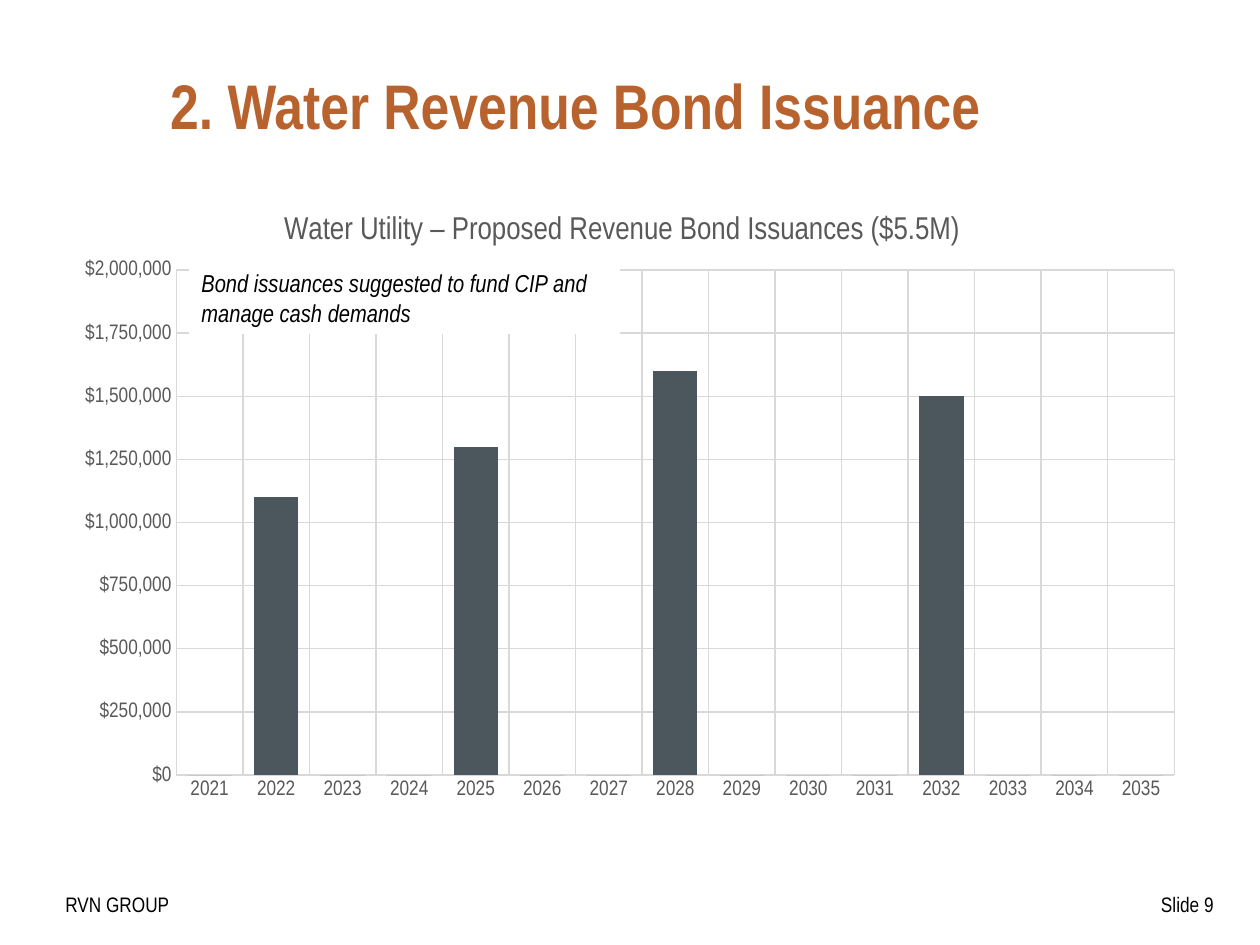
from lxml import etree
from pptx import Presentation
from pptx.chart import data as cd
from pptx.dml import color as dc
from pptx.enum import chart as ce, shapes, text
from pptx.oxml import ns
from pptx.util import Inches, Pt

FONT = "Arial Narrow"
HUES = {"title": "B8632E", "text": "000000", "label": "595959",
        "grid": "D9D9D9", "bar": "4B575D", "paper": "FFFFFF"}
TITLE = "2. Water Revenue Bond Issuance"
HEAD = "Water Utility – Proposed Revenue Bond Issuances ($5.5M)"
NOTE = "Bond issuances suggested to fund CIP and manage cash demands"
FOOT = [("RVN GROUP", (0.42, 7.03, 1.42, 0.3), "LEFT"),
        ("Slide 9", (8.92, 7.03, 0.81, 0.3), "RIGHT")]
YEARS = range(2021, 2036)
BONDS = {2022: 1100000, 2025: 1300000, 2028: 1600000, 2032: 1500000}


def hue(name):
    return dc.RGBColor.from_string(HUES[name])


def style(font, size, name, bold=False, italic=False):
    font.name, font.size = FONT, Pt(size)
    font.bold, font.italic = bold, italic
    font.color.rgb = hue(name)


def write(shape, words, size=12, name="text", align="LEFT", anchor="TOP", **looks):
    frame = shape.text_frame
    frame.word_wrap = True
    frame.vertical_anchor = getattr(text.MSO_ANCHOR, anchor)
    par = frame.paragraphs[0]
    par.alignment = getattr(text.PP_ALIGN, align)
    run = par.add_run()
    run.text = words
    style(run.font, size, name, **looks)


def rule(line):
    line.color.rgb = hue("grid")
    line.width = Pt(0.75)


def layout(node, inner=False, **spots):
    old = node.find(ns.qn("c:layout"))
    if old is None:
        old = etree.Element(ns.qn("c:layout"))
        node.insert(1 if node.tag == ns.qn("c:title") else 0, old)
    box = etree.SubElement(old, ns.qn("c:manualLayout"))
    pairs = [("layoutTarget", "inner")] if inner else []
    pairs += [("xMode", "edge"), ("yMode", "edge"), *spots.items()]
    for key, val in pairs:
        etree.SubElement(box, ns.qn("c:" + key)).set("val", str(val))


def place(box):
    return [Inches(n) for n in box]


def draw(slide):
    data = cd.CategoryChartData(number_format='"$"#,##0')
    data.categories = [str(y) for y in YEARS]
    data.add_series("Series 1", [BONDS.get(y, 0) for y in YEARS])
    chart = slide.shapes.add_chart(ce.XL_CHART_TYPE.COLUMN_STACKED,
                                   *place((0.5, 1.5, 9, 4.95)), data).chart
    style(chart.font, 10, "text")
    chart.has_legend = False
    chart.has_title = True
    head = chart.chart_title
    run = head.text_frame.paragraphs[0].add_run()
    run.text = HEAD
    style(run.font, 18, "label")
    layout(head._element, x=0.19, y=0.03)
    layout(chart._chartSpace.chart.plotArea, True, x=0.1, y=0.13, w=0.88, h=0.81)

    plot = chart.plots[0]
    plot.gap_width, plot.overlap = 50, 100
    plot.vary_by_categories = False
    fill = plot.series[0].format.fill
    fill.solid()
    fill.fore_color.rgb = hue("bar")

    cat, val = chart.category_axis, chart.value_axis
    for axis in (cat, val):
        axis.major_tick_mark = axis.minor_tick_mark = ce.XL_TICK_MARK.NONE
        axis.has_major_gridlines = True
        rule(axis.major_gridlines.format.line)
        style(axis.tick_labels.font, 12, "label")
    rule(cat.format.line)
    val.format.line.fill.background()
    val.minimum_scale, val.maximum_scale, val.major_unit = 0, 2000000, 250000
    val.tick_labels.number_format = '"$"#,##0'
    val.tick_labels.number_format_is_linked = False


def main():
    deck = Presentation()
    deck.slide_width, deck.slide_height = Inches(10), Inches(7.5)
    slide = deck.slides.add_slide(deck.slide_layouts[5])
    title = slide.shapes.title
    title.left, title.top, title.width, title.height = place((1.25, 0.33, 8.25, 1))
    write(title, TITLE, size=36, name="title", anchor="MIDDLE", bold=True)
    for words, box, align in FOOT:
        write(slide.shapes.add_textbox(*place(box)), words, align=align)
    draw(slide)
    note = slide.shapes.add_shape(shapes.MSO_SHAPE.RECTANGLE,
                                  *place((1.5, 2.08, 3.42, 0.57)))
    note.shadow.inherit = False
    note.fill.solid()
    note.fill.fore_color.rgb = hue("paper")
    note.line.fill.background()
    write(note, NOTE, size=14, italic=True)
    deck.save("out.pptx")


if __name__ == "__main__":
    main()
